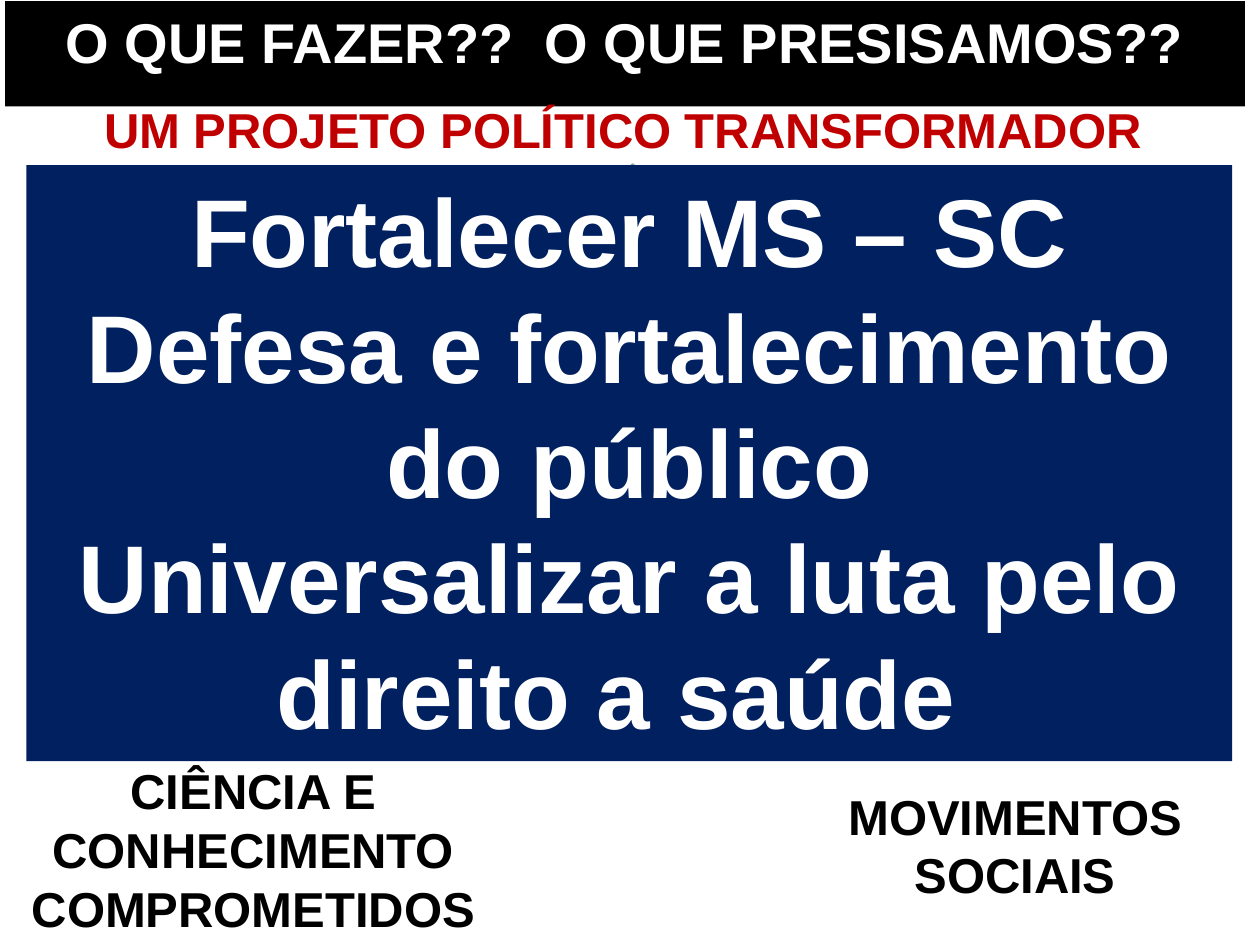
"""Build the slide on a transforming political project for health."""
from dataclasses import dataclass
from typing import Optional

from pptx import Presentation
from pptx.dml.color import RGBColor
from pptx.enum.shapes import MSO_SHAPE
from pptx.enum.text import MSO_ANCHOR, MSO_AUTO_SIZE, PP_ALIGN
from pptx.util import Inches, Pt

SLIDE_WIDTH, SLIDE_HEIGHT = Inches(10), Inches(7.5)
FONT = "Arial"
BLACK, WHITE, RED, NAVY = "000000", "FFFFFF", "C00000", "002060"
PALE_TEAL, TEAL = "BBE0E3", "8AA6A8"


@dataclass(frozen=True)
class Area:
    left: float
    top: float
    width: float
    height: float

    def lengths(self) -> tuple[int, int, int, int]:
        return (
            int(SLIDE_WIDTH * self.left / 100),
            int(SLIDE_HEIGHT * self.top / 100),
            int(SLIDE_WIDTH * self.width / 100),
            int(SLIDE_HEIGHT * self.height / 100),
        )


@dataclass(frozen=True)
class Panel:
    area: Area
    paragraphs: tuple[str, ...]
    size: int
    color: str
    fill: Optional[str] = None


HEADING = Panel(Area(0.4, 0.13, 98.4, 8.53),
                ("O QUE FAZER??  O QUE PRESISAMOS??",), 32, WHITE, BLACK)
TRIANGLE = Area(9.1, 17.47, 83.9, 59.87)
PANELS = (
    Panel(Area(63.4, 82.53, 35.4, 13.87), ("MOVIMENTOS ", "SOCIAIS "), 28, BLACK),
    Panel(Area(1.2, 79.87, 37.8, 20.13),
          ("CIÊNCIA E CONHECIMENTO COMPROMETIDOS",), 28, BLACK),
    Panel(Area(1.6, 9.87, 95.7, 7.6), ("UM PROJETO POLÍTICO TRANSFORMADOR",), 28, RED),
    Panel(Area(2.1, 17.47, 95.7, 63.07),
          ("Fortalecer MS – SC Defesa e fortalecimento do público",
           "Universalizar a luta pelo direito a saúde "), 55, WHITE, NAVY),
)


def rgb(color: str) -> RGBColor:
    return RGBColor.from_string(color)


def paint(shape, color: str) -> None:
    shape.fill.solid()
    shape.fill.fore_color.rgb = rgb(color)


def write(shape, panel: Panel) -> None:
    frame = shape.text_frame
    frame.word_wrap = True
    frame.auto_size = MSO_AUTO_SIZE.SHAPE_TO_FIT_TEXT
    frame.vertical_anchor = MSO_ANCHOR.TOP
    for index, text in enumerate(panel.paragraphs):
        paragraph = frame.add_paragraph() if index else frame.paragraphs[0]
        paragraph.alignment = PP_ALIGN.CENTER
        run = paragraph.add_run()
        run.text = text
        run.font.name = FONT
        run.font.size = Pt(panel.size)
        run.font.bold = True
        run.font.color.rgb = rgb(panel.color)


def add_heading(slide, panel: Panel) -> None:
    title = slide.shapes.title
    title.left, title.top, title.width, title.height = panel.area.lengths()
    paint(title, panel.fill)
    write(title, panel)


def add_triangle(slide, area: Area) -> None:
    triangle = slide.shapes.add_shape(MSO_SHAPE.ISOSCELES_TRIANGLE, *area.lengths())
    triangle.adjustments[0] = 0.49
    triangle.shadow.inherit = False
    paint(triangle, PALE_TEAL)
    triangle.line.color.rgb = rgb(TEAL)
    triangle.line.width = Pt(2)


def add_panel(slide, panel: Panel) -> None:
    if panel.fill:
        shape = slide.shapes.add_shape(MSO_SHAPE.RECTANGLE, *panel.area.lengths())
        shape.shadow.inherit = False
        shape.line.fill.background()
        paint(shape, panel.fill)
    else:
        shape = slide.shapes.add_textbox(*panel.area.lengths())
    write(shape, panel)


def main() -> None:
    presentation = Presentation()
    presentation.slide_width, presentation.slide_height = SLIDE_WIDTH, SLIDE_HEIGHT
    slide = presentation.slides.add_slide(
        presentation.slide_layouts.get_by_name("Title Only"))
    add_heading(slide, HEADING)
    add_triangle(slide, TRIANGLE)
    for panel in PANELS:
        add_panel(slide, panel)
    presentation.save("out.pptx")


if __name__ == "__main__":
    main()
